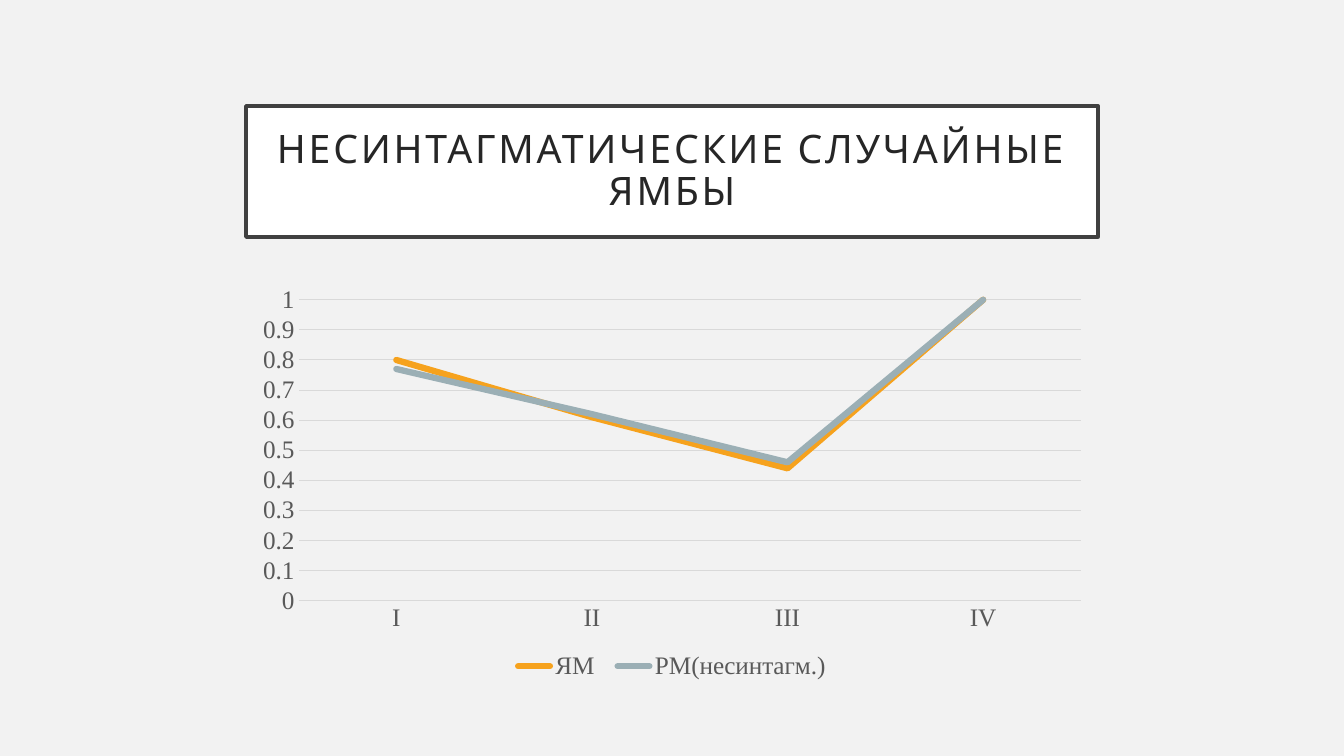
from pptx import Presentation
from pptx.chart.data import CategoryChartData
from pptx.dml.color import RGBColor
from pptx.enum.chart import XL_CHART_TYPE as ChartType
from pptx.enum.chart import XL_LEGEND_POSITION as LegendPosition
from pptx.enum.chart import XL_MARKER_STYLE as MarkerStyle
from pptx.enum.chart import XL_TICK_MARK as TickMark
from pptx.enum.shapes import MSO_SHAPE as ShapeType
from pptx.enum.text import MSO_ANCHOR as Anchor
from pptx.enum.text import PP_ALIGN as Align
from pptx.util import Emu, Pt

WIDTH, HEIGHT = 1344, 756
EMU_PER_PX = 12192000 / WIDTH
COLORS = {
    "background": "F2F2F2",
    "panel": "FFFFFF",
    "border": "404040",
    "title": "262626",
    "label": "595959",
    "grid": "D9D9D9",
    "orange": "F6A21D",
    "gray_blue": "9BAFB5",
}


def px(value):
    return Emu(round(value * EMU_PER_PX))


def color(name):
    return RGBColor.from_string(COLORS[name])


def set_font(font, name, size, color_name):
    font.name = name
    font.size = Pt(size)
    font.bold = False
    font.color.rgb = color(color_name)


def set_line(line, color_name, width):
    line.color.rgb = color(color_name)
    line.width = Pt(width)


def write_text(frame, text, *, font, size, color_name, align, line_spacing, tracking):
    paragraph = frame.paragraphs[0]
    paragraph.alignment = align
    paragraph.line_spacing = line_spacing
    run = paragraph.add_run()
    run.text = text
    set_font(run.font, font, size, color_name)
    run.font._element.set("spc", str(tracking * 100))


class SlideBuilder:
    title_font = "Cabin"
    chart_font = "Times New Roman"
    chart_size = 18

    def __init__(self, presentation):
        self.slide = presentation.slides.add_slide(presentation.slide_layouts[6])
        fill = self.slide.background.fill
        fill.solid()
        fill.fore_color.rgb = color("background")

    def title(self, text, left, top, width, height):
        shape = self.slide.shapes.add_shape(
            ShapeType.RECTANGLE, px(left), px(top), px(width), px(height))
        shape.shadow.inherit = False
        shape.fill.solid()
        shape.fill.fore_color.rgb = color("panel")
        set_line(shape.line, "border", 2.5)
        frame = shape.text_frame
        frame.word_wrap = True
        frame.vertical_anchor = Anchor.MIDDLE
        frame.margin_left = frame.margin_right = px(20)
        frame.margin_top = frame.margin_bottom = px(20)
        write_text(frame, text, font=self.title_font, size=28, color_name="title",
                   align=Align.CENTER, line_spacing=0.9, tracking=2)

    def line_chart(self, categories, series_rows, left, top, width, height):
        data = CategoryChartData()
        data.categories = categories
        for name, values, _ in series_rows:
            data.add_series(name, values)
        chart = self.slide.shapes.add_chart(
            ChartType.LINE, px(left), px(top), px(width), px(height), data).chart
        chart.has_title = False
        set_font(chart.font, self.chart_font, self.chart_size, "label")
        chart.plots[0].vary_by_categories = False
        for series, (_, _, color_name) in zip(chart.plots[0].series, series_rows):
            series.smooth = False
            series.marker.style = MarkerStyle.NONE
            set_line(series.format.line, color_name, 4.5)
            series.format.line._get_or_add_ln().set("cap", "rnd")
        self.axes(chart)
        chart.has_legend = True
        chart.legend.position = LegendPosition.BOTTOM
        chart.legend.include_in_layout = False
        set_font(chart.legend.font, self.chart_font, self.chart_size, "label")

    def axes(self, chart):
        for axis in (chart.category_axis, chart.value_axis):
            axis.major_tick_mark = axis.minor_tick_mark = TickMark.NONE
            set_font(axis.tick_labels.font, self.chart_font, self.chart_size, "label")
        set_line(chart.category_axis.format.line, "grid", 0.75)
        value_axis = chart.value_axis
        value_axis.minimum_scale = 0
        value_axis.maximum_scale = 1
        value_axis.major_unit = 0.1
        value_axis.format.line.fill.background()
        value_axis.has_major_gridlines = True
        set_line(value_axis.major_gridlines.format.line, "grid", 0.75)


def main():
    presentation = Presentation()
    presentation.slide_width = px(WIDTH)
    presentation.slide_height = px(HEIGHT)
    builder = SlideBuilder(presentation)
    left, width = 246, 852
    builder.title("НЕСИНТАГМАТИЧЕСКИЕ СЛУЧАЙНЫЕ ЯМБЫ", left, 106, width, 131)
    builder.line_chart(
        ["I", "II", "III", "IV"],
        [
            ("ЯМ ", (0.8, 0.61, 0.44, 1), "orange"),
            ("РМ(несинтагм.)", (0.77, 0.62, 0.46, 1), "gray_blue"),
        ],
        left, 278, width, 407)
    presentation.save("out.pptx")


if __name__ == "__main__":
    main()
